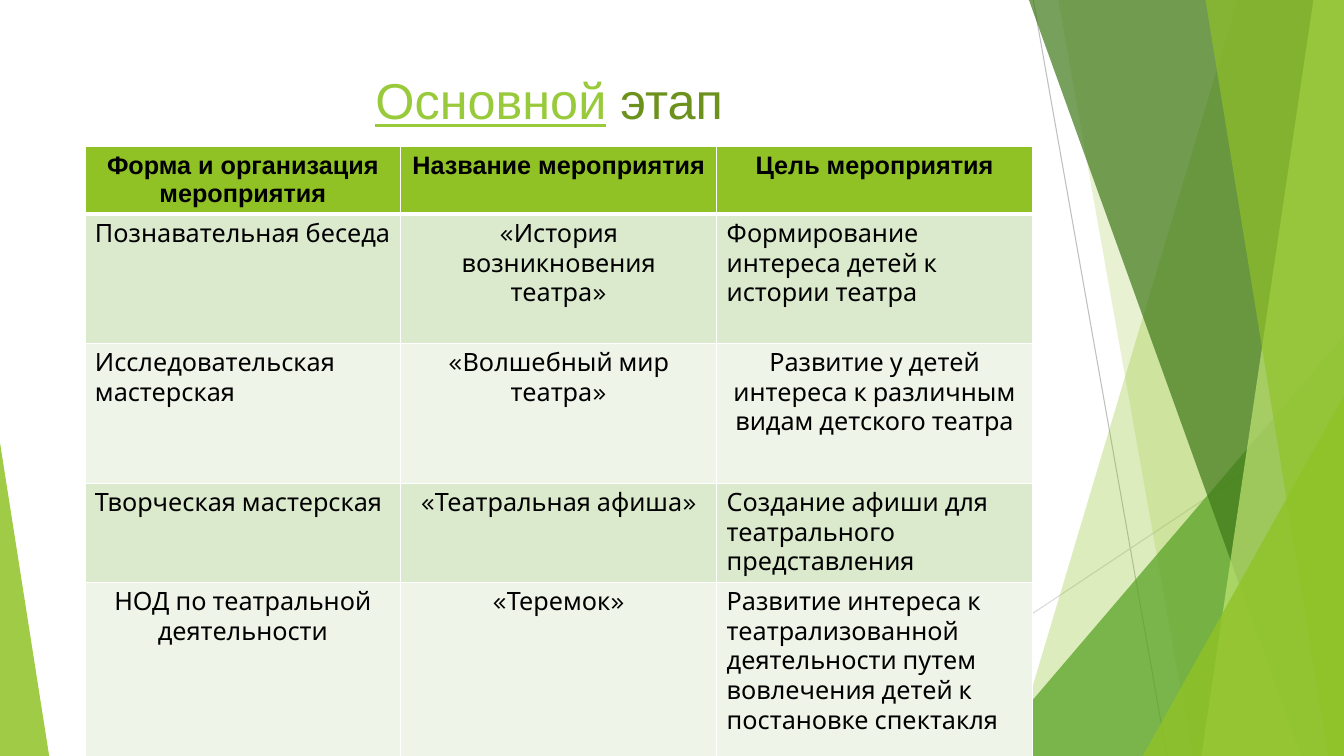
from pptx import Presentation
from pptx.dml.color import RGBColor
from pptx.enum.shapes import MSO_CONNECTOR, MSO_SHAPE
from pptx.enum.text import MSO_ANCHOR, PP_ALIGN
from pptx.oxml.ns import qn
from pptx.util import Cm, Pt
from lxml.etree import SubElement

W, H = 33.87, 19.05

GREEN = RGBColor(0x90, 0xC2, 0x26)
MID_GREEN = RGBColor(0x54, 0xA0, 0x21)
DARK_GREEN = RGBColor(0x3F, 0x78, 0x19)
LIGHT_GREEN = RGBColor(0xC0, 0xE4, 0x74)
LINK_GREEN = RGBColor(0x99, 0xCA, 0x3C)
TITLE_GREEN = RGBColor(0x6C, 0x92, 0x1D)
BAND_DARK = RGBColor(0xDB, 0xE9, 0xCD)
BAND_LIGHT = RGBColor(0xEE, 0xF4, 0xE8)
GREY = RGBColor(0xBF, 0xBF, 0xBF)
LIGHT_GREY = RGBColor(0xD9, 0xD9, 0xD9)
BLACK = RGBColor(0, 0, 0)

L, C = PP_ALIGN.LEFT, PP_ALIGN.CENTER
ROWS = [
    (1.7, [("Форма и организация мероприятия", C),
           ("Название мероприятия", C),
           ("Цель мероприятия", C)]),
    (3.25, [("Познавательная беседа", L),
            ("«История возникновения театра»", C),
            ("Формирование интереса детей к истории театра", L)]),
    (3.53, [("Исследовательская мастерская", L),
            ("«Волшебный мир театра»", C),
            ("Развитие у детей интереса к различным видам детского театра", C)]),
    (2.5, [("Творческая мастерская", L),
           ("«Театральная афиша»", C),
           ("Создание афиши для театрального представления", L)]),
    (4.5, [("НОД по театральной деятельности", C),
           ("«Теремок»", C),
           ("Развитие интереса к театрализованной деятельности путем "
            "вовлечения детей к постановке спектакля", L)]),
]


def add_line(s, x1, y1, x2, y2, color):
    line = s.shapes.add_connector(MSO_CONNECTOR.STRAIGHT, Cm(x1), Cm(y1), Cm(x2), Cm(y2))
    line.line.color.rgb = color
    line.line.width = Pt(0.75)
    SubElement(line._element.spPr, qn("a:effectLst"))


def paint(sp, color, opacity):
    sp.shadow.inherit = False
    sp.line.fill.background()
    sp.fill.solid()
    sp.fill.fore_color.rgb = color
    clr = sp._element.spPr.find(".//" + qn("a:srgbClr"))
    SubElement(clr, qn("a:alpha"), val=str(opacity * 1000))


def add_band(s, top_x, bottom_x, color, opacity):
    """Full-height band from a slanted left edge to the slide's right edge."""
    fb = s.shapes.build_freeform(Cm(top_x), 0)
    fb.add_line_segments([(Cm(W), 0), (Cm(W), Cm(H)), (Cm(bottom_x), Cm(H))], close=True)
    paint(fb.convert_to_shape(), color, opacity)


def add_triangle(s, left, top, width, apex, color, opacity):
    """Triangle standing on the slide's bottom edge."""
    sp = s.shapes.add_shape(MSO_SHAPE.ISOSCELES_TRIANGLE,
                            Cm(left), Cm(top), Cm(width), Cm(H - top))
    sp.adjustments[0] = apex
    paint(sp, color, opacity)


def add_run(p, text, size=18, font="Karla", color=BLACK, bold=False, underline=False):
    r = p.add_run()
    r.text = text
    r.font.size = Pt(size)
    r.font.name = font
    r.font.color.rgb = color
    r.font.bold = bold
    r.font.underline = underline


def set_borders(cell, **widths):
    tcPr = cell._tc.get_or_add_tcPr()
    for side in "LRTB":
        ln = SubElement(tcPr, qn("a:ln" + side), w=str(Pt(widths.get(side, 1))))
        SubElement(SubElement(ln, qn("a:solidFill")), qn("a:srgbClr"), val="FFFFFF")


def add_title(s):
    title = s.shapes.title
    title.left, title.top, title.width, title.height = Cm(1.9), Cm(1.47), Cm(23.88), Cm(1.57)
    tf = title.text_frame
    tf.vertical_anchor = MSO_ANCHOR.TOP
    tf.margin_top = Cm(0.28)
    p = tf.paragraphs[0]
    p.alignment = C
    add_run(p, "Основной", size=36, font="Arial", color=LINK_GREEN, underline=True)
    add_run(p, " этап", size=36, font="Arial", color=TITLE_GREEN)


def add_events_table(s):
    height = sum(h for h, _ in ROWS)
    table = s.shapes.add_table(len(ROWS), 3, Cm(2.14), Cm(3.7), Cm(23.88), Cm(height)).table
    for i, (row_height, cells) in enumerate(ROWS):
        table.rows[i].height = Cm(row_height)
        header = i == 0
        fill = GREEN if header else (BAND_DARK if i % 2 else BAND_LIGHT)
        for j, (text, align) in enumerate(cells):
            cell = table.cell(i, j)
            set_borders(cell, T=3 if i == 1 else 1, B=3 if header else 1)
            cell.fill.solid()
            cell.fill.fore_color.rgb = fill
            p = cell.text_frame.paragraphs[0]
            p.alignment = align
            add_run(p, text, font="Arial" if header else "Karla", bold=header)


def main():
    prs = Presentation()
    prs.slide_width, prs.slide_height = Cm(W), Cm(H)
    s = prs.slides.add_slide(prs.slide_layouts[5])

    # Background facets, back to front
    add_line(s, 26.04, 0, 29.41, H, GREY)
    add_line(s, W, 10.24, 20.62, H, LIGHT_GREY)
    add_band(s, 31.19, 25.5, GREEN, 30)
    add_band(s, 26.67, 30.05, GREEN, 20)
    add_triangle(s, 24.82, 8.46, W - 24.82, 1, MID_GREEN, 72)
    add_band(s, 25.93, 32.79, DARK_GREEN, 70)
    add_band(s, 33.1, 30.28, LIGHT_GREEN, 70)
    add_band(s, 30.38, 33.48, GREEN, 65)
    add_triangle(s, 28.8, 9.98, W - 28.8, 1, GREEN, 80)
    add_triangle(s, 0, 11.15, 1.24, 0, GREEN, 85)

    # Content
    add_title(s)
    add_events_table(s)
    prs.save("out.pptx")


if __name__ == "__main__":
    main()
